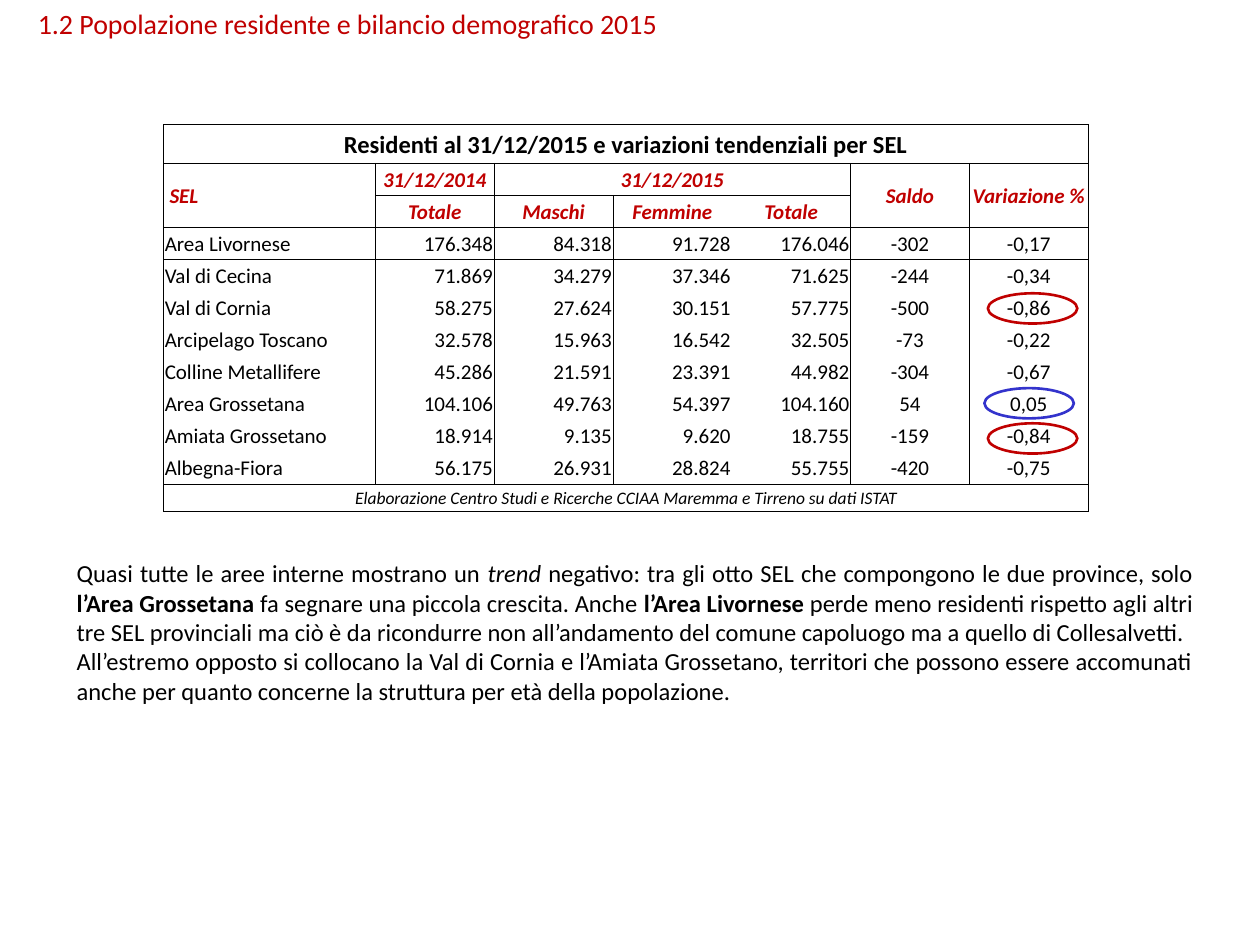
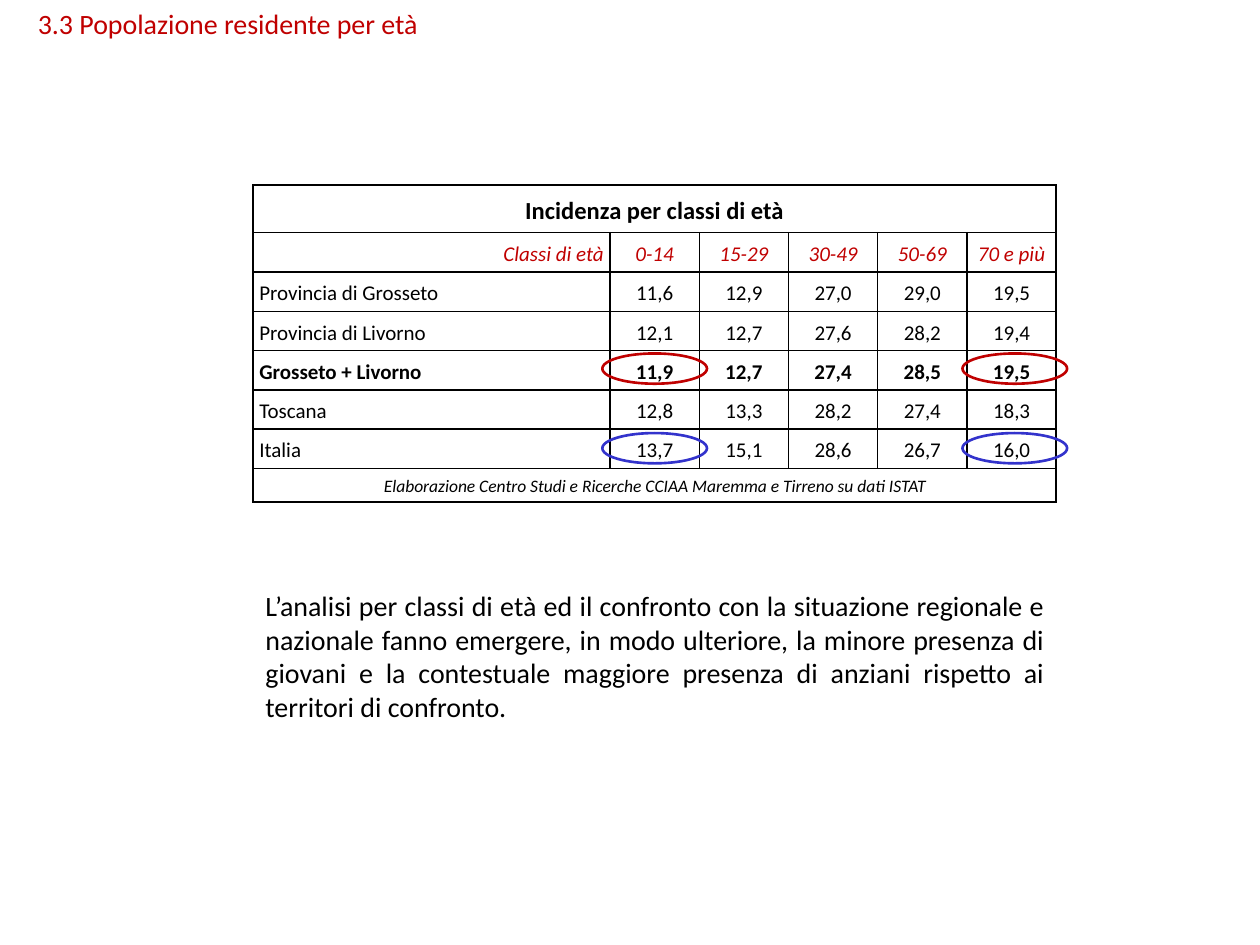
from dataclasses import dataclass
from typing import Callable, NamedTuple

from lxml.etree import SubElement
from pptx import Presentation
from pptx.dml.color import RGBColor
from pptx.enum.shapes import MSO_SHAPE as SHAPE
from pptx.enum.text import MSO_ANCHOR as ANCHOR, MSO_AUTO_SIZE as AUTO, PP_ALIGN as ALIGN
from pptx.oxml.ns import qn
from pptx.util import Pt

COLORS = {"text": "000000", "red": "C00000", "blue": "3333CC"}
FONT = "Calibri"
SOURCE = "Elaborazione Centro Studi e Ricerche CCIAA Maremma e Tirreno su dati ISTAT"
NO_GRID_STYLE = "{2D5ABB26-0587-4C30-8999-92F81FD0307C}"
ALIGNMENTS = {"l": ALIGN.LEFT, "c": ALIGN.CENTER, "r": ALIGN.RIGHT, "j": ALIGN.JUSTIFY}
ELLIPSE_HEIGHT = 17.3


class Style(NamedTuple):
    size: float
    color: str = "text"
    bold: bool = False
    italic: bool = False


class Box(NamedTuple):
    left: float
    top: float
    width: float
    height: float


class Run(NamedTuple):
    text: str
    bold: bool = False
    italic: bool = False


class Highlight(NamedTuple):
    left: float
    top: float
    width: float
    color: str


@dataclass
class TableSpec:
    left: float
    top: float
    col_widths: list[float]
    row_heights: list[float]
    caption: str
    header: list[tuple[str, ...]]
    body: list[tuple[str, ...]]
    header_align: str
    body_align: str
    header_style: Style
    margins: tuple[float, float, float, float]  # left, top, right, bottom
    line_width: float
    borders: Callable[[int, int], str]
    line_spacing: float = 1.0
    merges: tuple[tuple[int, int, int, int], ...] = ()
    strong_label: str = ""


TITLE_BOX = Box(14.4, 0, 555.8, 26.6)
TITLE_STYLE = Style(16, "red")
CAPTION_STYLE = Style(14, bold=True)
BODY_STYLE = Style(12)
STRONG_STYLE = Style(12, bold=True)
SOURCE_STYLE = Style(10, italic=True)


def rgb(name: str) -> RGBColor:
    return RGBColor.from_string(COLORS[name])


def format_paragraph(p, style: Style, align: str) -> None:
    p.alignment = ALIGNMENTS[align]
    font = p.font
    font.name, font.size = FONT, Pt(style.size)
    font.bold, font.italic = style.bold, style.italic
    font.color.rgb = rgb(style.color)


def add_titled_slide(prs, title: str):
    s = prs.slides.add_slide(prs.slide_layouts[5])
    sp = s.shapes.title
    sp.left, sp.top, sp.width, sp.height = map(Pt, TITLE_BOX)
    tf = sp.text_frame
    tf.text = title
    tf.word_wrap, tf.auto_size = True, AUTO.NONE
    tf.vertical_anchor = ANCHOR.TOP
    format_paragraph(tf.paragraphs[0], TITLE_STYLE, "l")
    return s


def add_comment(s, box: Box, size: float, paragraphs: list[list[Run]]) -> None:
    tf = s.shapes.add_textbox(*map(Pt, box)).text_frame
    tf.word_wrap = True
    for i, runs in enumerate(paragraphs):
        p = tf.add_paragraph() if i else tf.paragraphs[0]
        format_paragraph(p, Style(size), "j")
        for run in runs:
            r = p.add_run()
            r.text = run.text
            if run.bold:
                r.font.bold = True
            if run.italic:
                r.font.italic = True


def add_highlights(s, highlights: list[Highlight]) -> None:
    for h in highlights:
        sp = s.shapes.add_shape(SHAPE.OVAL, Pt(h.left), Pt(h.top), Pt(h.width), Pt(ELLIPSE_HEIGHT))
        sp.shadow.inherit = False
        sp.fill.background()
        sp.line.color.rgb = rgb(h.color)
        sp.line.width = Pt(1.5)


def set_borders(cell, sides: str, width: float) -> None:
    """Rule the given sides (any of L, R, T, B) of a cell."""
    tcPr = cell._tc.get_or_add_tcPr()
    for side in "LRTB":
        if side in sides:
            ln = SubElement(tcPr, qn(f"a:ln{side}"), w=str(Pt(width)))
            fill = SubElement(ln, qn("a:solidFill"))
            SubElement(fill, qn("a:srgbClr"), val=COLORS["text"])


def row_look(spec: TableSpec, row: int, label: str) -> tuple[Style, str]:
    """Style and column alignments of a table row."""
    last = len(spec.row_heights) - 1
    if row in (0, last):
        return (SOURCE_STYLE if row else CAPTION_STYLE), "c" * len(spec.col_widths)
    if row <= len(spec.header):
        return spec.header_style, spec.header_align
    return (STRONG_STYLE if label == spec.strong_label else BODY_STYLE), spec.body_align


def add_data_table(s, spec: TableSpec):
    n_cols, n_rows = len(spec.col_widths), len(spec.row_heights)
    frame = s.shapes.add_table(n_rows, n_cols, Pt(spec.left), Pt(spec.top),
                               Pt(sum(spec.col_widths)), Pt(sum(spec.row_heights)))
    table = frame.table
    table.first_row = table.horz_banding = False
    table._tbl.tblPr.find(qn("a:tableStyleId")).text = NO_GRID_STYLE
    for col, width in zip(table.columns, spec.col_widths):
        col.width = Pt(width)

    padding = ("",) * (n_cols - 1)
    rows = [(spec.caption, *padding), *spec.header, *spec.body, (SOURCE, *padding)]
    for i, texts in enumerate(rows):
        table.rows[i].height = Pt(spec.row_heights[i])
        style, aligns = row_look(spec, i, texts[0])
        for j, text in enumerate(texts):
            cell = table.cell(i, j)
            cell.text = text
            cell.vertical_anchor = ANCHOR.MIDDLE
            (cell.margin_left, cell.margin_top,
             cell.margin_right, cell.margin_bottom) = map(Pt, spec.margins)
            p = cell.text_frame.paragraphs[0]
            p.line_spacing = spec.line_spacing
            format_paragraph(p, style, aligns[j])
            set_borders(cell, spec.borders(i, j), spec.line_width)
            cell.fill.background()

    full_rows = tuple((i, 0, i, n_cols - 1) for i in (0, n_rows - 1))
    for top, left, bottom, right in full_rows + spec.merges:
        table.cell(top, left).merge(table.cell(bottom, right))
    return table


def residents_borders(row: int, col: int) -> str:
    """Full grid around the headings; the 2015 columns form one open block."""
    if row in (0, 1, 11):
        return "LRTB"
    sides = {2: "L", 3: "", 4: "R"}.get(col, "LR")
    return sides + {2: "TB", 3: "T", 10: "B"}.get(row, "")


RESIDENTS = TableSpec(
    left=93.5, top=71.3,
    col_widths=[121] + [67.9] * 6,
    row_heights=[22] + [18.36] * 10 + [15.4],
    caption="Residenti al 31/12/2015 e variazioni tendenziali per SEL",
    header=[
        ("SEL", "31/12/2014", "31/12/2015", "", "", "Saldo", "Variazione %"),
        ("", "Totale", "Maschi", "Femmine", "Totale", "", ""),
    ],
    body=[
        ("Area Livornese", "176.348", "84.318", "91.728", "176.046", "-302", "-0,17"),
        ("Val di Cecina", "71.869", "34.279", "37.346", "71.625", "-244", "-0,34"),
        ("Val di Cornia", "58.275", "27.624", "30.151", "57.775", "-500", "-0,86"),
        ("Arcipelago Toscano", "32.578", "15.963", "16.542", "32.505", "-73", "-0,22"),
        ("Colline Metallifere", "45.286", "21.591", "23.391", "44.982", "-304", "-0,67"),
        ("Area Grossetana", "104.106", "49.763", "54.397", "104.160", "54", "0,05"),
        ("Amiata Grossetano", "18.914", "9.135", "9.620", "18.755", "-159", "-0,84"),
        ("Albegna-Fiora", "56.175", "26.931", "28.824", "55.755", "-420", "-0,75"),
    ],
    header_align="lcccccc", body_align="lrrrrcc",
    header_style=Style(12, "red", bold=True, italic=True),
    margins=(0.7, 0.7, 0.7, 0), line_width=0.5, borders=residents_borders,
    merges=((1, 0, 2, 0), (1, 2, 1, 4), (1, 5, 2, 5), (1, 6, 2, 6)),
)

AGE_CLASSES = TableSpec(
    left=144.6, top=105.8,
    col_widths=[204] + [51] * 5,
    row_heights=[27.2] + [22.46] * 6 + [19.2],
    caption="Incidenza per classi di età",
    header=[("Classi di età", "0-14", "15-29", "30-49", "50-69", "70 e più")],
    body=[
        ("Provincia di Grosseto", "11,6", "12,9", "27,0", "29,0", "19,5"),
        ("Provincia di Livorno", "12,1", "12,7", "27,6", "28,2", "19,4"),
        ("Grosseto + Livorno", "11,9", "12,7", "27,4", "28,5", "19,5"),
        ("Toscana", "12,8", "13,3", "28,2", "27,4", "18,3"),
        ("Italia", "13,7", "15,1", "28,6", "26,7", "16,0"),
    ],
    header_align="rccccc", body_align="lccccc",
    header_style=Style(12, "red", italic=True),
    margins=(3.6, 0, 3.6, 0), line_width=1, borders=lambda row, col: "LRTB",
    line_spacing=1.15, strong_label="Grosseto + Livorno",
)


def build_residents(prs) -> None:
    s = add_titled_slide(prs, "1.2 Popolazione residente e bilancio demografico 2015")
    add_comment(s, Box(36.7, 315.4, 652.3, 92.2), 14, [
        [
            Run("Quasi tutte le aree interne mostrano un "),
            Run("trend", italic=True),
            Run(" negativo: tra gli otto SEL che compongono le due province, solo "),
            Run("l’Area Grossetana ", bold=True),
            Run("fa segnare una piccola crescita. Anche "),
            Run("l’Area Livornese", bold=True),
            Run(" perde meno residenti rispetto agli altri tre SEL provinciali ma ciò è da "
                "ricondurre non all’andamento del comune capoluogo ma a quello di Collesalvetti."),
        ],
        [Run("All’estremo opposto si collocano la Val di Cornia e l’Amiata Grossetano, territori "
             "che possono essere accomunati anche per quanto concerne la struttura per età "
             "della popolazione.")],
    ])
    table = add_data_table(s, RESIDENTS)
    table.cell(1, 0).margin_left = Pt(3.4)
    add_highlights(s, [
        Highlight(564.5, 167.6, 51.1, "red"),
        Highlight(564.5, 241.9, 51.1, "red"),
        Highlight(562.5, 221.8, 51.1, "blue"),
    ])


def build_age_classes(prs) -> None:
    s = add_titled_slide(prs, "3.3 Popolazione residente per età")
    add_comment(s, Box(144.6, 332.8, 459.4, 85), 16, [
        [Run("L’analisi per classi di età ed il confronto con la situazione regionale e nazionale "
             "fanno emergere, in modo ulteriore, la minore presenza di giovani e la contestuale "
             "maggiore presenza di anziani rispetto ai territori di confronto.")],
    ])
    add_data_table(s, AGE_CLASSES)
    add_highlights(s, [Highlight(left, top, 59.8, color)
                       for top, color in ((202, "red"), (247.5, "blue"))
                       for left in (344.2, 550)])


def main() -> None:
    prs = Presentation()
    prs.slide_width, prs.slide_height = Pt(720), Pt(540)
    build_residents(prs)
    build_age_classes(prs)
    prs.save("out.pptx")


if __name__ == "__main__":
    main()
